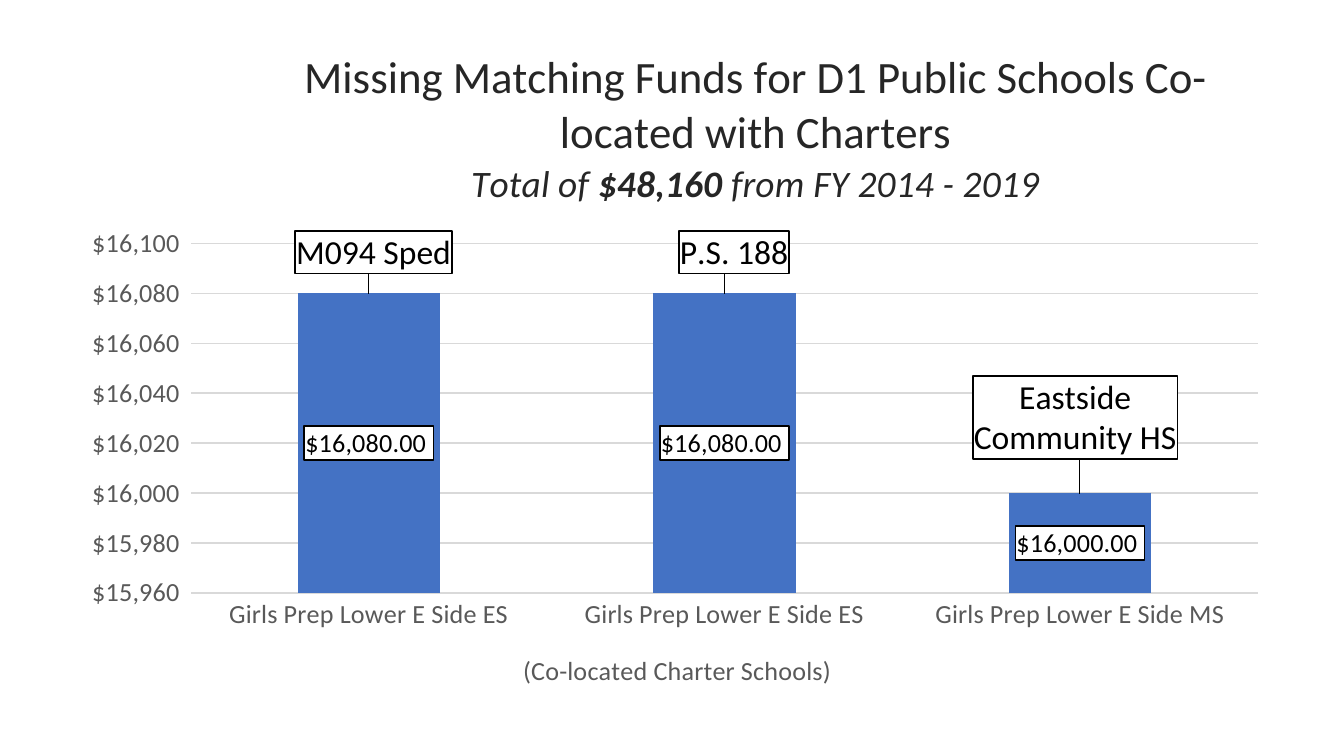
from lxml.etree import SubElement
from pptx import Presentation
from pptx.chart.data import CategoryChartData
from pptx.dml.color import RGBColor
from pptx.enum.chart import XL_CHART_TYPE, XL_LABEL_POSITION, XL_TICK_MARK
from pptx.oxml import parse_xml
from pptx.oxml.ns import nsdecls, qn
from pptx.util import Cm, Pt

COLORS = {
    "bar": "4472C4",
    "second": "ED7D31",
    "title": "262626",
    "axis": "595959",
    "grid": "D9D9D9",
    "label": "000000",
    "label_fill": "FFFFFF",
}
FONT = "Calibri"
AXIS_FORMAT = '"$"#,##0_);[Red]\\("$"#,##0\\)'
LABEL_FORMAT = '"$"#,##0.00_);[Red]\\("$"#,##0.00\\)'

# Charter school, matching funds, district school, label offset (x, y)
SCHOOLS = [
    ("Girls Prep Lower E Side ES", 16080, "M094 Sped", (0.004, -0.06)),
    ("Girls Prep Lower E Side ES", 16080, "P.S. 188", (0.008, -0.06)),
    ("Girls Prep Lower E Side MS", 16000, "Eastside Community HS", (-0.004, -0.11)),
]


def format_font(font, size, color, bold=False, italic=False):
    font.name = FONT
    font.size = Pt(size)
    font.bold = bold
    font.italic = italic
    font.color.rgb = RGBColor.from_string(COLORS[color])


def add_text(paragraph, text, **text_format):
    run = paragraph.add_run()
    run.text = text
    format_font(run.font, **text_format)


def make_layout(x, y, width=None, height=None, edge=False):
    """Return a manual layout in fractions of the chart."""
    layout = parse_xml(f"<c:layout {nsdecls('c')}><c:manualLayout/></c:layout>")
    values = [("x", x), ("y", y)]
    if width is not None:
        values = [("layoutTarget", "inner")] + values
    if edge:
        values[-2:-2] = [("xMode", "edge"), ("yMode", "edge")]
    if width is not None:
        values += [("w", width), ("h", height)]
    for name, value in values:
        SubElement(layout[0], qn(f"c:{name}")).set("val", str(value))
    return layout


def place_title(title, x, y):
    element = title._element
    for old_layout in element.findall(qn("c:layout")):
        element.remove(old_layout)
    element.find(qn("c:tx")).addnext(make_layout(x, y, edge=True))


def make_label_box():
    return parse_xml(
        f"<c:spPr {nsdecls('c', 'a')}>"
        f'<a:solidFill><a:srgbClr val="{COLORS["label_fill"]}"/></a:solidFill>'
        f'<a:ln w="{Pt(1)}"><a:solidFill><a:srgbClr val="{COLORS["label"]}"/>'
        "</a:solidFill></a:ln></c:spPr>"
    )


def format_title(chart):
    text_frame = chart.chart_title.text_frame
    heading = text_frame.paragraphs[0]
    add_text(heading, "Missing Matching Funds for D1 Public Schools Co-located with Charters",
             size=24, color="title")
    total = text_frame.add_paragraph()
    for text, bold in [("Total of ", False), ("$48,160", True), (" from FY 2014 - 2019", False)]:
        add_text(total, text, size=20, color="title", bold=bold, italic=True)
    chart.chart_title.include_in_layout = False
    place_title(chart.chart_title, 0.19, 0.03)


def format_axes(chart):
    category_axis, value_axis = chart.category_axis, chart.value_axis
    for axis in (category_axis, value_axis):
        axis.major_tick_mark = axis.minor_tick_mark = XL_TICK_MARK.NONE
        format_font(axis.tick_labels.font, size=14, color="axis")

    value_axis.minimum_scale, value_axis.maximum_scale = 15960, 16100
    value_axis.major_unit = 20
    value_axis.tick_labels.number_format = AXIS_FORMAT
    value_axis.tick_labels.number_format_is_linked = False
    value_axis.format.line.fill.background()
    for line in (category_axis.format.line, value_axis.major_gridlines.format.line):
        line.width = Pt(0.75)
        line.color.rgb = RGBColor.from_string(COLORS["grid"])

    paragraph = category_axis.axis_title.text_frame.paragraphs[0]
    add_text(paragraph, "(Co-located Charter Schools)", size=14, color="axis")
    place_title(category_axis.axis_title, 0.37, 0.91)


def format_series(plot):
    plot.gap_width, plot.overlap = 150, 100
    for series, color in zip(plot.series, ("bar", "second")):
        series.format.fill.solid()
        series.format.fill.fore_color.rgb = RGBColor.from_string(COLORS[color])
    funds, names = plot.series

    # Amounts in the middle of the bars
    labels = funds.data_labels
    labels.show_value = True
    labels.number_format = LABEL_FORMAT
    labels.number_format_is_linked = False
    labels.position = XL_LABEL_POSITION.CENTER
    format_font(labels.font, size=14, color="label")
    labels._element.find(qn("c:numFmt")).addnext(make_label_box())

    # District school names above the bars
    for index, (_, _, school, offset) in enumerate(SCHOOLS):
        label = names.points[index].data_label
        add_text(label.text_frame.paragraphs[0], school, size=18, color="label")
        label.position = XL_LABEL_POSITION.CENTER
        element = names.data_labels._element.findall(qn("c:dLbl"))[index]
        element.find(qn("c:idx")).addnext(make_layout(*offset))
        element.find(qn("c:tx")).addnext(make_label_box())


def add_funds_chart(slide, left, top, width, height):
    data = CategoryChartData()
    data.categories = [school[0] for school in SCHOOLS]
    data.add_series("Series 1", [school[1] for school in SCHOOLS])
    data.add_series("Series 2", [0] * len(SCHOOLS))
    chart = slide.shapes.add_chart(
        XL_CHART_TYPE.COLUMN_STACKED, left, top, width, height, data
    ).chart
    chart.has_legend = False
    chart.plots[0].vary_by_categories = False
    format_font(chart.font, size=10, color="label")
    format_title(chart)
    format_axes(chart)
    format_series(chart.plots[0])

    # Plot area
    plot_area = chart._chartSpace.chart.plotArea
    for old_layout in plot_area.findall(qn("c:layout")):
        plot_area.remove(old_layout)
    plot_area.insert(0, make_layout(0.1, 0.32, 0.88, 0.51, edge=True))


def main():
    presentation = Presentation()
    presentation.slide_width, presentation.slide_height = Cm(25.4), Cm(14.29)
    slide = presentation.slides.add_slide(presentation.slide_layouts[6])
    add_funds_chart(slide, Cm(1.32), Cm(0.46), Cm(22.91), Cm(12.95))
    presentation.save("out.pptx")


if __name__ == "__main__":
    main()
